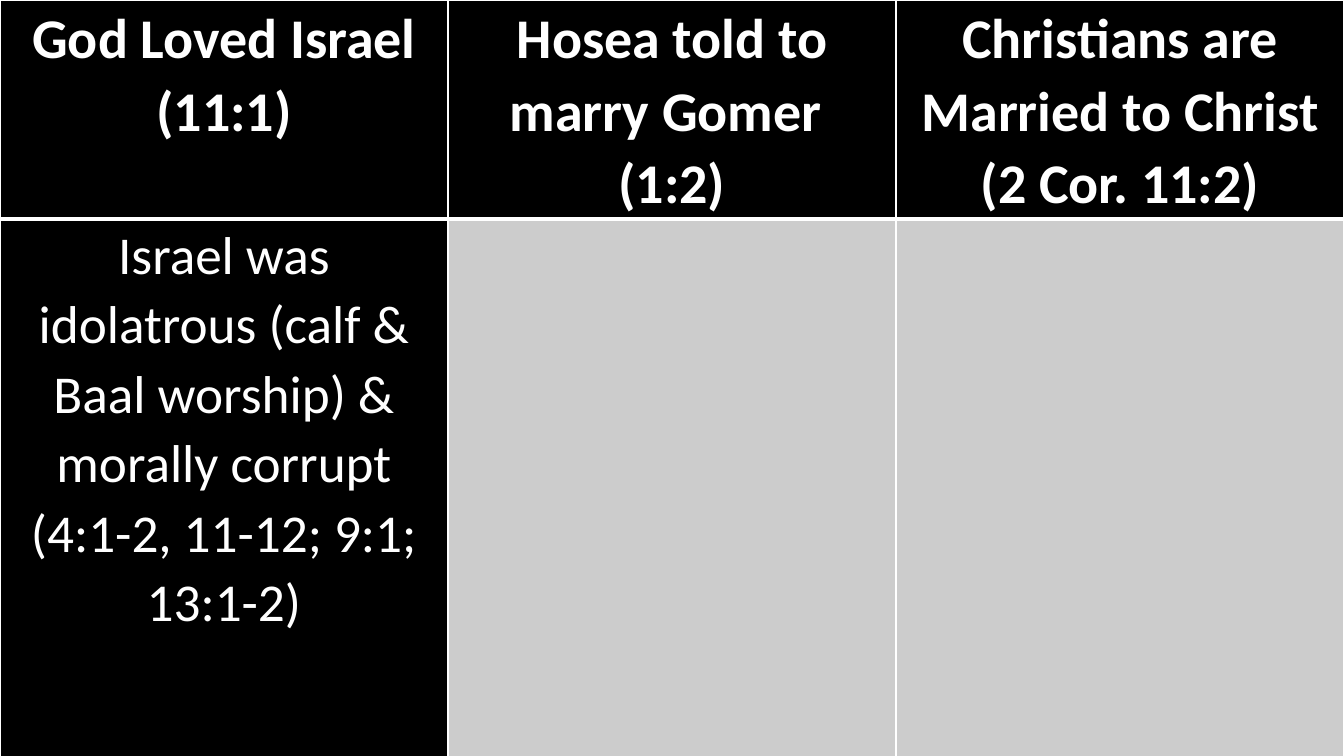
from lxml import etree
from pptx import Presentation
from pptx.dml.color import RGBColor
from pptx.enum import text
from pptx.oxml.ns import qn
from pptx.util import Inches, Pt

# Content: one list per table row, one list of paragraphs per cell
ROWS = [
    [
        ["God Loved Israel (11:1)"],
        ["Hosea told to marry Gomer ", "(1:2)"],
        ["Christians are Married to Christ (2 Cor. 11:2)"],
    ],
    [
        ["Israel was idolatrous (calf & Baal worship) & morally corrupt "
         "(4:1-2, 11-12; 9:1; 13:1-2)"],
        [],
        [],
    ],
]
ROW_HEIGHTS = [2.12, 5.38]
PAGE_WIDTH, PAGE_HEIGHT = 13.33, 7.5

THEME = {
    "font": "Calibri",
    "heading": 40,
    "body": 38,
    "spacing": 1.07,
    "ink": "FFFFFF",
    "filled": "000000",
    "empty": "CCCCCC",
    "thin": 1,
    "thick": 3,
}


def write(frame, lines, size, bold=False):
    """Put centred paragraphs into a text frame."""
    for index, line in enumerate(lines):
        para = frame.paragraphs[0] if index == 0 else frame.add_paragraph()
        para.alignment = text.PP_ALIGN.CENTER
        para.line_spacing = THEME["spacing"]
        span = para.add_run()
        span.text = line
        span.font.name = THEME["font"]
        span.font.size = Pt(size)
        span.font.bold = bold
        span.font.color.rgb = RGBColor.from_string(THEME["ink"])


def add_borders(cell, **widths):
    """Draw the cell's borders; the lines must precede its fill."""
    properties = cell._tc.get_or_add_tcPr()
    for position, (side, width) in enumerate(widths.items()):
        line = etree.Element(qn(f"a:ln{side}"), w=str(Pt(width)))
        fill = etree.SubElement(line, qn("a:solidFill"))
        etree.SubElement(fill, qn("a:srgbClr"), val=THEME["ink"])
        properties.insert(position, line)


# Page
deck = Presentation()
deck.slide_width, deck.slide_height = Inches(PAGE_WIDTH), Inches(PAGE_HEIGHT)
page = deck.slides.add_slide(deck.slide_layouts[6])
page.background.fill.solid()
page.background.fill.fore_color.rgb = RGBColor.from_string(THEME["filled"])

# Comparison table across the whole page
columns = len(ROWS[0])
table = page.shapes.add_table(
    len(ROWS), columns, 0, 0, Inches(PAGE_WIDTH), Inches(sum(ROW_HEIGHTS))
).table
table.horz_banding = False
for column in table.columns:
    column.width = Inches(PAGE_WIDTH / columns)

for row_index, (row, height) in enumerate(zip(ROWS, ROW_HEIGHTS)):
    table.rows[row_index].height = Inches(height)
    heading = row_index == 0
    thin, thick = THEME["thin"], THEME["thick"]
    for column_index, lines in enumerate(row):
        cell = table.cell(row_index, column_index)
        cell.margin_left = cell.margin_right = Inches(0.07)
        cell.margin_top = cell.margin_bottom = 0
        cell.fill.solid()
        color = THEME["filled"] if lines else THEME["empty"]
        cell.fill.fore_color.rgb = RGBColor.from_string(color)
        add_borders(cell, L=thin, R=thin, T=thin if heading else thick,
                    B=thick if heading else thin)
        write(cell.text_frame, lines, bold=heading,
              size=THEME["heading"] if heading else THEME["body"])

deck.save("out.pptx")
